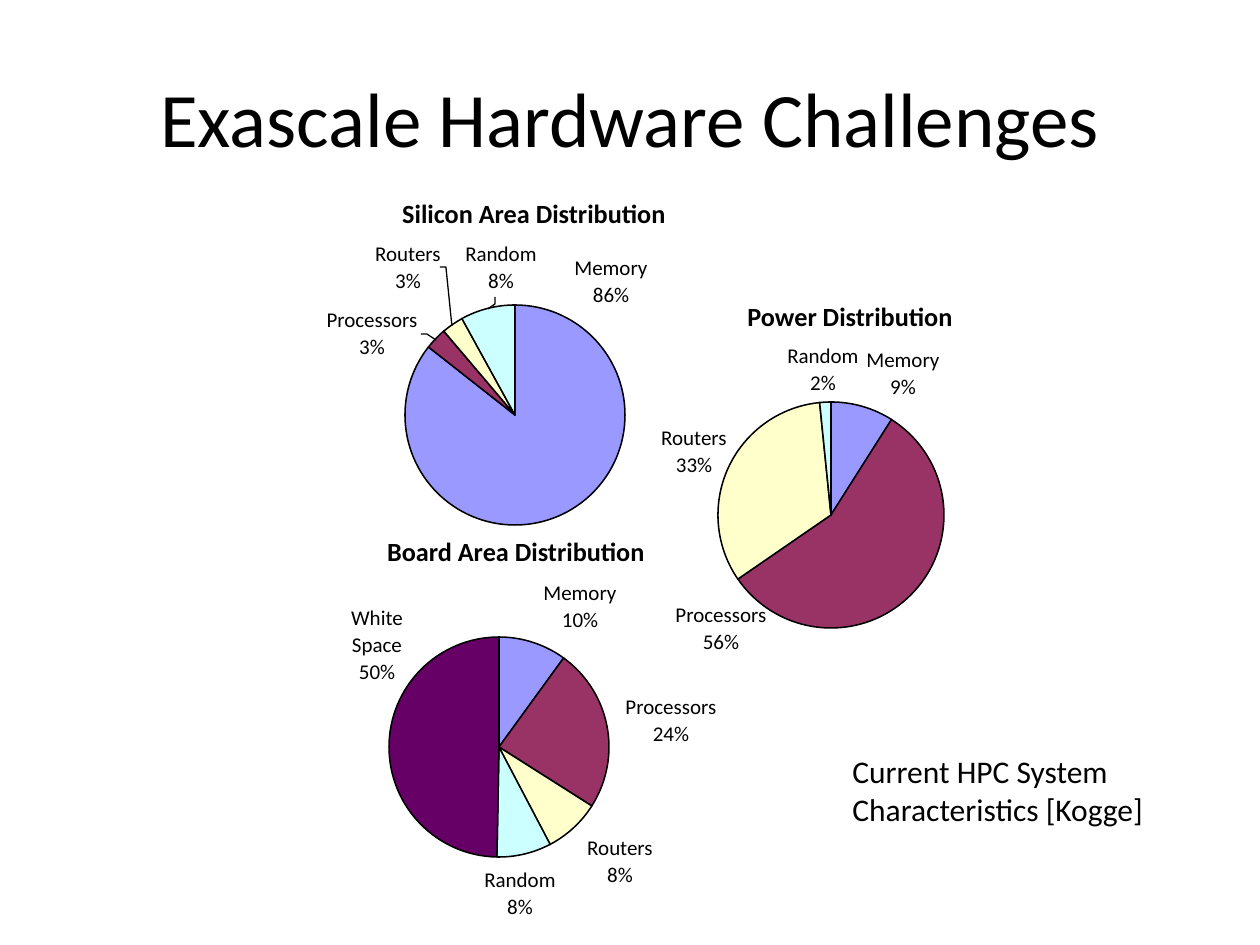
from math import ceil, cos, floor, radians, sin, tan

from pptx import Presentation
from pptx.dml.color import RGBColor
from pptx.enum.text import MSO_ANCHOR, MSO_AUTO_SIZE, PP_ALIGN
from pptx.oxml.ns import qn
from pptx.util import Emu, Pt

BLACK = RGBColor(0x00, 0x00, 0x00)
BLUE = RGBColor(0x99, 0x99, 0xFF)
PLUM = RGBColor(0x99, 0x33, 0x66)
CREAM = RGBColor(0xFF, 0xFF, 0xCC)
CYAN = RGBColor(0xCC, 0xFF, 0xFF)
PURPLE = RGBColor(0x66, 0x00, 0x66)

LEFT, CENTER = PP_ALIGN.LEFT, PP_ALIGN.CENTER
TOP, MIDDLE = MSO_ANCHOR.TOP, MSO_ANCHOR.MIDDLE
FIXED, GROW = MSO_AUTO_SIZE.NONE, MSO_AUTO_SIZE.SHAPE_TO_FIT_TEXT

# Part name: slice colour, label width
PARTS = {
    "Memory": (BLUE, 74),
    "Processors": (PLUM, 103),
    "Routers": (CREAM, 73),
    "Random": (CYAN, 78),
    "White Space": (PURPLE, 59),
}

# Slices: part, percent, label centre x, label top
PIES = [
    {
        "head": ("Power Distribution", 850, 300, 229),
        "disc": (831, 515, 113),
        "slices": [("Memory", 9, 903, 347), ("Processors", 56.4, 721, 602),
                   ("Routers", 33, 694, 425), ("Random", 1.6, 823, 343)],
        "leads": [],
    },
    {
        "head": ("Silicon Area Distribution", 534, 197, 301),
        "disc": (515, 415, 110),
        "slices": [("Memory", 85.6, 611, 255), ("Processors", 3.2, 372, 307),
                   ("Routers", 3.2, 408, 241), ("Random", 8, 501, 241)],
        "leads": [[(421, 334), (427, 334), (436, 340)],
                  [(440, 267), (446, 267), (452, 326)],
                  [(495, 297), (495, 304), (488, 309)]],
    },
    {
        "head": ("Board Area Distribution", 516, 535, 290),
        "disc": (499, 747, 110),
        "slices": [("Memory", 10, 580, 580), ("Processors", 24, 671, 694),
                   ("Routers", 8.3, 620, 835), ("Random", 8, 520, 867),
                   ("White Space", 49.7, 377, 605)],
        "leads": [],
    },
]


class Deck:
    FONT = "Calibri"
    SCALE = 914400 / 126
    STEP = 27  # label line pitch

    def __init__(self, wide, high):
        self.prs = Presentation()
        self.prs.slide_width = self.emu(wide)
        self.prs.slide_height = self.emu(high)
        self.slide = self.prs.slides.add_slide(self.prs.slide_layouts[6])

    def emu(self, px):
        return Emu(round(px * self.SCALE))

    def text(self, words, box, size, align=LEFT, anchor=TOP, fit=GROW):
        shape = self.slide.shapes.add_textbox(*map(self.emu, box))
        frame = shape.text_frame
        self.style(frame, words, size, align)
        frame.word_wrap = True
        frame.auto_size = fit
        frame.vertical_anchor = anchor

    def style(self, frame, words, size, align, bold=False):
        para = frame.paragraphs[0]
        para.text = words
        para.alignment = align
        font = para.font
        font.name, font.size, font.bold = self.FONT, Pt(size), bold
        font.color.rgb = BLACK

    def label(self, group, words, mid, top, wide, high=25, size=12, bold=False):
        box = (mid - wide / 2, top, wide, high)
        frame = group.shapes.add_textbox(*map(self.emu, box)).text_frame
        frame.margin_left = frame.margin_right = 0
        frame.margin_top = frame.margin_bottom = 0
        frame.word_wrap = False
        frame.auto_size = GROW
        self.style(frame, words, size, CENTER, bold)

    def outline(self, group, points, weight, fill=None):
        spots = [(self.emu(x), self.emu(y)) for x, y in points]
        pen = group.shapes.build_freeform(*spots[0])
        pen.add_line_segments(spots[1:], close=fill is not None)
        shape = pen.convert_to_shape()
        shape.shadow.inherit = False
        if fill is None:
            shape.fill.background()
        else:
            shape.fill.solid()
            shape.fill.fore_color.rgb = fill
        shape.line.color.rgb = BLACK
        shape.line.width = Pt(weight)
        return shape

    def wedge(self, group, disc, start, share, fill):
        x, y, radius = disc

        def spot(turn, pull=0):
            across, down = sin(turn), -cos(turn)
            return (x + radius * (across - pull * down),
                    y + radius * (down + pull * across))

        # One curve for each quarter that the slice touches
        end = start + share
        inner = range(floor(start / 25) + 1, ceil(end / 25))
        turns = [radians(3.6 * cut)
                 for cut in (start, *(25 * n for n in inner), end)]
        points = [spot(turns[0])]
        for a, b in zip(turns, turns[1:]):
            pull = 4 / 3 * tan((b - a) / 4)
            points += [spot(a, pull), spot(b, -pull), spot(b)]
        shape = self.outline(group, points + [(x, y)], 0.88, fill)

        # Turn each three line ends of the arc into one curve
        lines = list(shape.element.iter(qn("a:lnTo")))[:-1]
        for i in range(0, len(lines), 3):
            curve, *rest = lines[i:i + 3]
            bend = curve.makeelement(qn("a:cubicBezTo"), {})
            curve.addprevious(bend)
            for line in (curve, *rest):
                bend.append(line[0])
                line.getparent().remove(line)

    def pie(self, head, disc, slices, leads):
        group = self.slide.shapes.add_group_shape()
        # Slices run clockwise from the top
        start = 0
        for part, share, _, _ in slices:
            self.wedge(group, disc, start, share, PARTS[part][0])
            start = round(start + share, 1)
        # Heading, leader lines, labels
        self.label(group, *head, high=31, size=15, bold=True)
        for points in leads:
            self.outline(group, points, 0.75)
        for part, share, mid, top in slices:
            for word in part.split():
                self.label(group, word, mid, top, PARTS[part][1])
                top += self.STEP
            value = f"{share:.0f}%"
            self.label(group, value, mid, top, 6 + 12 * len(value))


def main():
    deck = Deck(1260, 945)
    deck.text("Exascale Hardware Challenges", (63, 38, 1134, 158), 44,
              CENTER, MIDDLE, FIXED)
    for pie in PIES:
        deck.pie(**pie)
    deck.text("Current HPC System Characteristics [Kogge]",
              (840, 746, 346, 89), 18)
    deck.prs.save("out.pptx")


if __name__ == "__main__":
    main()
